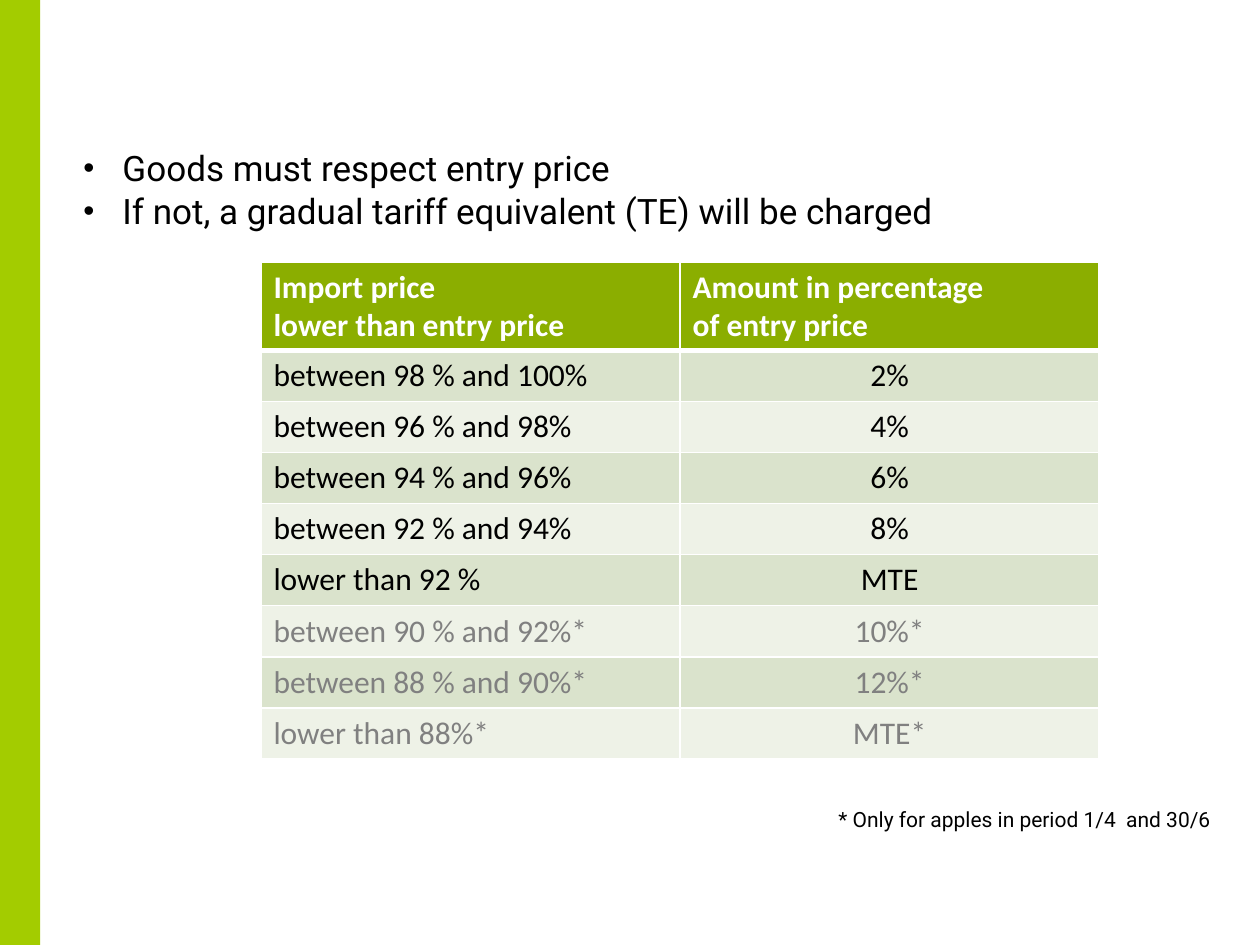
import pptx
import pptx.dml.color
import pptx.enum.shapes
import pptx.enum.text
import pptx.oxml
import pptx.oxml.ns
import pptx.util
from pptx.util import Cm

ALIGN = pptx.enum.text.PP_ALIGN
WHITE, BLACK, GREY = "FFFFFF", "000000", "808080"
LIME, HEADER_GREEN = "A3CC00", "8BAE00"
BANDS = ["DAE3CC", "EEF2E7"]

BULLETS = [
    "Goods must respect entry price",
    "If not, a gradual tariff equivalent (TE) will be charged",
]
HEADERS = [
    ["Import price", "lower than entry price"],
    ["Amount in percentage", "of entry price"],
]
TARIFFS = [
    ("between 98 % and 100%", "2%"),
    ("between 96 % and 98%", "4%"),
    ("between 94 % and 96%", "6%"),
    ("between 92 % and 94%", "8%"),
    ("lower than 92 %", "MTE"),
    ("between 90 % and 92%*", "10%*"),
    ("between 88 % and 90%*", "12%*"),
    ("lower than 88%*", "MTE*"),
]
FOOTNOTE = "* Only for apples in period 1/4  and 30/6"


def colour(hex_text):
    return pptx.dml.color.RGBColor.from_string(hex_text)


def add_xml(parent, xml):
    namespace = pptx.oxml.ns.nsdecls("a")
    parent.append(pptx.oxml.parse_xml(xml.replace(">", f" {namespace}>", 1)))


def add_run(para, text, size, font, fill, bold=False):
    span = para.add_run()
    span.text = text
    span.font.size = pptx.util.Pt(size)
    span.font.name = font
    span.font.bold = bold
    span.font.color.rgb = colour(fill)


def add_side_bar(slide, height):
    bar = slide.shapes.add_shape(
        pptx.enum.shapes.MSO_SHAPE.RECTANGLE, 0, 0, Cm(0.81), height)
    bar.shadow.inherit = False
    bar.fill.solid()
    bar.fill.fore_color.rgb = colour(LIME)
    bar.line.fill.background()


def add_bullet(para):
    properties = para._p.get_or_add_pPr()
    properties.set("marL", str(Cm(0.79)))
    properties.set("indent", str(-Cm(0.79)))
    add_xml(properties, '<a:buSzPct val="90000"></a:buSzPct>')
    add_xml(properties, '<a:buFont typeface="Arial"></a:buFont>')
    add_xml(properties, '<a:buChar char="•"></a:buChar>')


def add_text(slide, top, height, lines, size, align=ALIGN.LEFT, bulleted=False):
    box = slide.shapes.add_textbox(Cm(1.68), Cm(top), Cm(22.73), Cm(height))
    frame = box.text_frame
    frame.word_wrap = True
    frame.margin_left = frame.margin_right = 0
    frame.margin_top = frame.margin_bottom = 0
    for index, line in enumerate(lines):
        para = frame.add_paragraph() if index else frame.paragraphs[0]
        if bulleted:
            add_bullet(para)
        para.alignment = align
        para.line_spacing = 0.9
        if index:
            para.space_before = pptx.util.Pt(3)
        add_run(para, line, size, "Roboto", BLACK)


def set_borders(cell, widths):
    """Draw white borders; widths maps a side (L, R, T, B) to points."""
    properties = cell._tc.get_or_add_tcPr()
    for side, width in widths.items():
        add_xml(properties,
                f'<a:ln{side} w="{pptx.util.Pt(width)}"><a:solidFill>'
                f'<a:srgbClr val="{WHITE}"/></a:solidFill></a:ln{side}>')


def fill_cell(cell, lines, background, ink, align, bold=False, top=1, bottom=1):
    set_borders(cell, {"L": 1, "R": 1, "T": top, "B": bottom})
    cell.fill.solid()
    cell.fill.fore_color.rgb = colour(background)
    frame = cell.text_frame
    for index, line in enumerate(lines):
        para = frame.add_paragraph() if index else frame.paragraphs[0]
        para.alignment = align
        add_run(para, line, 18, "Calibri", ink, bold)


def add_tariff_table(slide):
    header_height, row_height, column_width = Cm(1.78), Cm(1.03), Cm(8.45)
    table = slide.shapes.add_table(
        len(TARIFFS) + 1, 2, Cm(5.26), Cm(5.28), column_width * 2,
        header_height + row_height * len(TARIFFS)).table
    for column in table.columns:
        column.width = column_width
    for row in table.rows:
        row.height = row_height
    table.rows[0].height = header_height

    for column, lines in enumerate(HEADERS):
        fill_cell(table.cell(0, column), lines, HEADER_GREEN, WHITE,
                  ALIGN.LEFT, bold=True, bottom=3)
    for row, texts in enumerate(TARIFFS, start=1):
        for column, text in enumerate(texts):
            fill_cell(table.cell(row, column), [text], BANDS[(row - 1) % 2],
                      GREY if text.endswith("*") else BLACK,
                      ALIGN.CENTER if column else ALIGN.LEFT,
                      top=3 if row == 1 else 1)


def main():
    deck = pptx.Presentation()
    deck.slide_width, deck.slide_height = Cm(25.4), Cm(19.05)
    slide = deck.slides.add_slide(deck.slide_layouts[6])
    add_side_bar(slide, deck.slide_height)
    add_text(slide, 3.05, 1.7, BULLETS, 20, bulleted=True)
    add_tariff_table(slide)
    add_text(slide, 16.31, 0.5, [FOOTNOTE], 12, align=ALIGN.RIGHT)
    deck.save("out.pptx")


if __name__ == "__main__":
    main()
